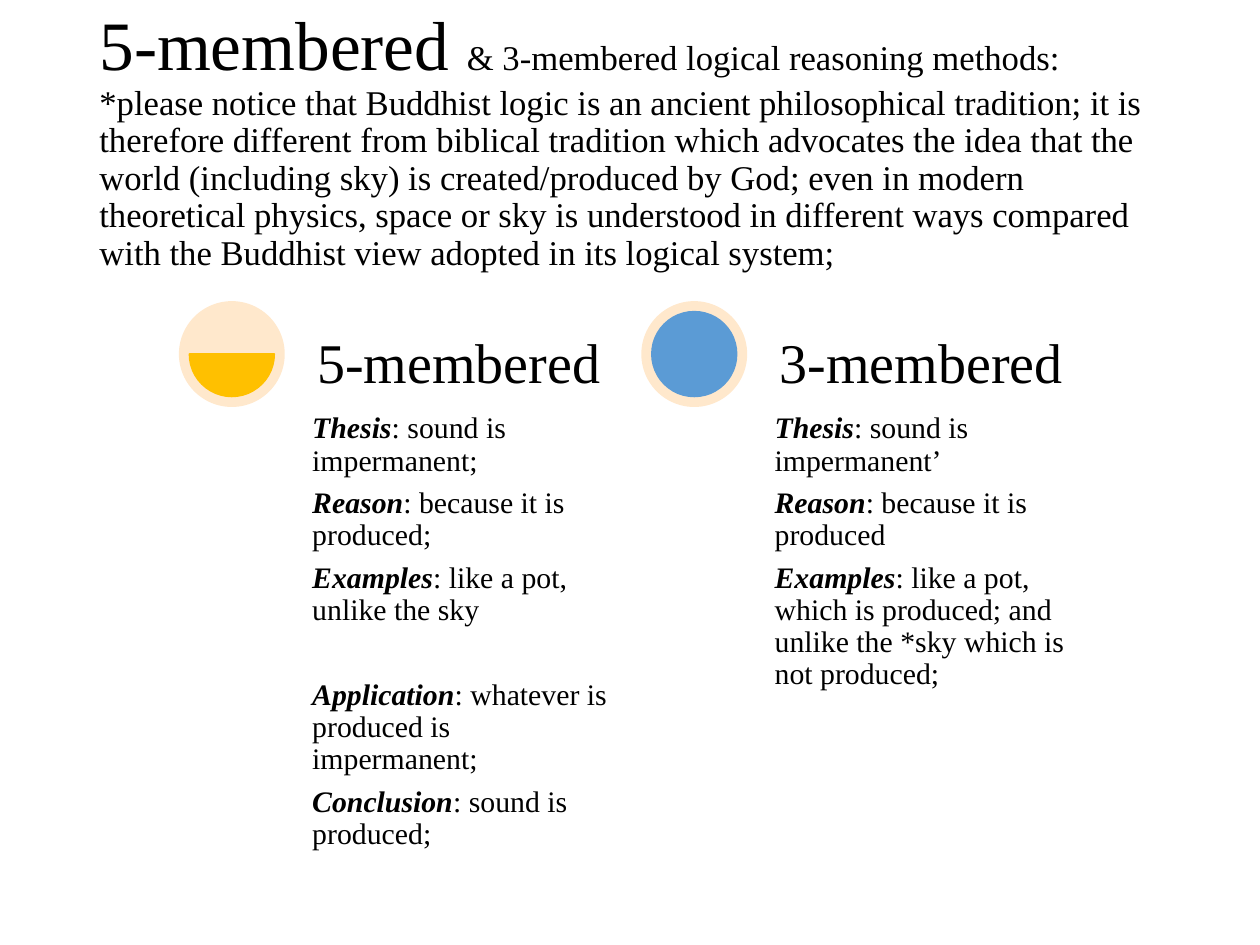
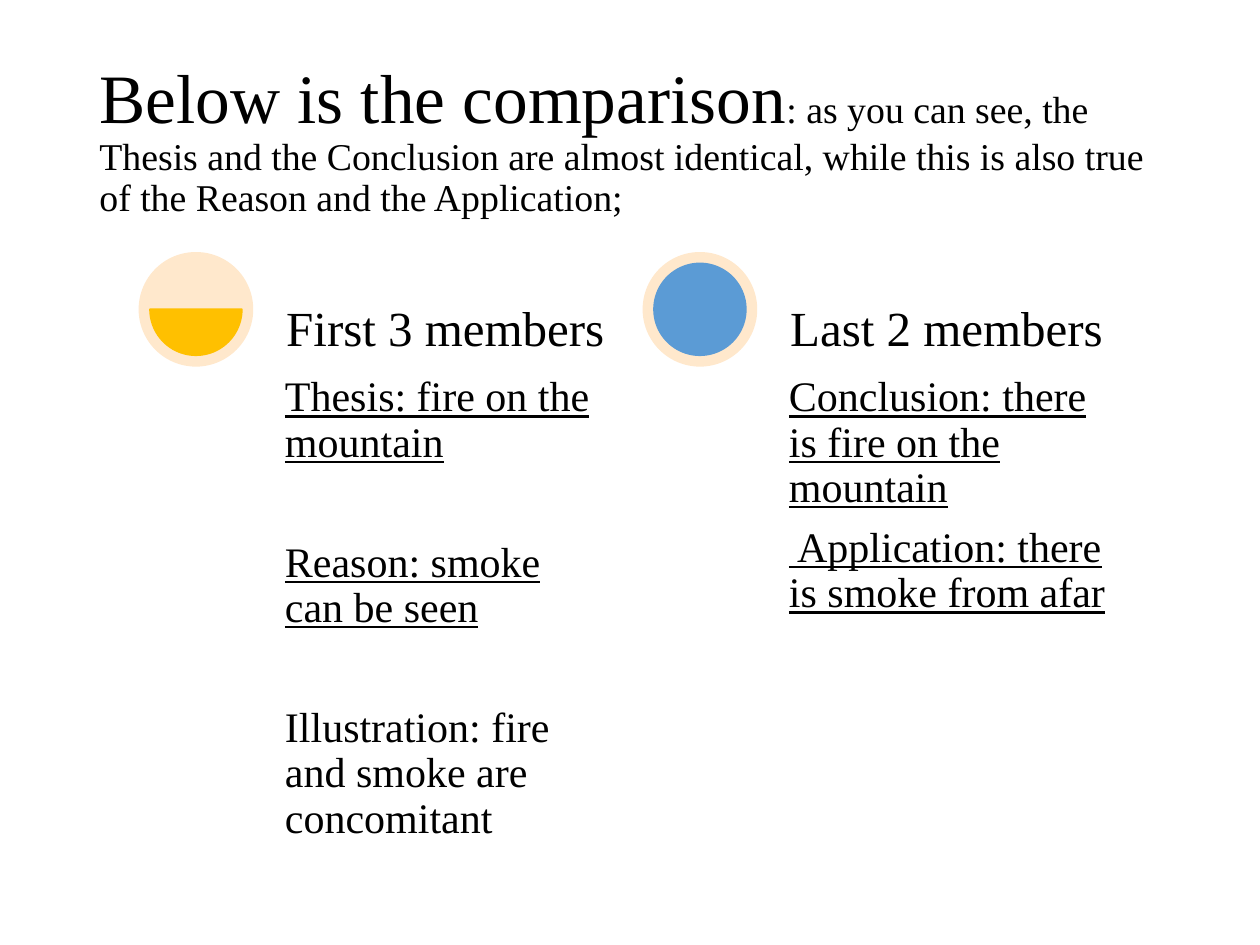
from pptx import Presentation
from pptx.dml.color import RGBColor
from pptx.enum.shapes import MSO_SHAPE
from pptx.enum.text import MSO_ANCHOR
from pptx.util import Inches, Pt

OVAL, CHORD = MSO_SHAPE.OVAL, MSO_SHAPE.CHORD
TOP, MIDDLE, BOTTOM = MSO_ANCHOR.TOP, MSO_ANCHOR.MIDDLE, MSO_ANCHOR.BOTTOM

COLORS = {"text": "000000", "disc": "FFE8CC", "half": "FFC000", "full": "5B9BD5"}
FONT = "Times New Roman"
SLIDE_W, SLIDE_H = 10, 7.5
BODY_BOTTOM = 0.9 * SLIDE_H

# Shares of the disc's diameter
TEXT_OFFSET, TEXT_WIDTH, CHORD_INSET = 1.2, 2.96, 0.1

# Shares of the text size
PARA_GAP = 0.35
WIDE_GAP = 1.78

# Chord angles in units of 100000/60000 degrees
CHORDS = {"half": (0, 108), "full": (162, 162)}

LEAD = {"bold": True, "italic": True}
UNDERLINED = {"underline": True}


def rgb(name):
    return RGBColor.from_string(COLORS[name])


def add_text(s, box, paragraphs, anchor=TOP, inset=(0.1, 0.05)):
    """Each paragraph is (runs, space after); each run is (text, size, format)."""
    tf = s.shapes.add_textbox(*map(Inches, box)).text_frame
    x_inset, y_inset = map(Inches, inset)
    settings = {"word_wrap": True, "vertical_anchor": anchor,
                "margin_left": x_inset, "margin_right": x_inset,
                "margin_top": y_inset, "margin_bottom": y_inset}
    for name, value in settings.items():
        setattr(tf, name, value)
    for i, (runs, gap) in enumerate(paragraphs):
        p = tf.add_paragraph() if i else tf.paragraphs[0]
        p.line_spacing = 0.9
        p.space_after = Pt(gap)
        for text, size, style in runs:
            r = p.add_run()
            r.text = text
            r.font.color.rgb = rgb("text")
            for name, value in {"name": FONT, "size": Pt(size), **style}.items():
                setattr(r.font, name, value)


def add_title(s, lead, rest, rest_size):
    box = (0.069 * SLIDE_W, 0.4, 0.862 * SLIDE_W, 1.45)
    add_text(s, box, [([(lead, 39.6, {}), (rest, rest_size, {})], 0)], MIDDLE)


def add_round(s, kind, left, top, size, color):
    sp = s.shapes.add_shape(kind, *map(Inches, (left, top, size, size)))
    sp.shadow.inherit = False
    sp.fill.solid()
    sp.fill.fore_color.rgb = rgb(color)
    sp.line.fill.background()
    return sp


def add_gauge(s, left, top, disc, level):
    add_round(s, OVAL, left, top, disc, "disc")
    inset = CHORD_INSET * disc
    sp = add_round(s, CHORD, left + inset, top + inset, disc - 2 * inset, level)
    sp.line.color.rgb = rgb(level)
    sp.line.width = Pt(1)
    for i, angle in enumerate(CHORDS[level]):
        sp.adjustments[i] = angle


def add_columns(s, left, top, pitch, disc, sizes, insets, columns):
    """Each column is (heading, members); each member is (runs, gap below)."""
    head_size, body_size = sizes
    head_inset, body_inset = insets
    for i, (level, (heading, members)) in enumerate(zip(CHORDS, columns)):
        x = left + i * pitch
        add_gauge(s, x, top, disc, level)
        text_x, width = x + TEXT_OFFSET * disc, TEXT_WIDTH * disc
        body_top = top + disc
        body = [([(text, body_size, style) for text, style in runs], gap * body_size)
                for runs, gap in members]
        add_text(s, (text_x, body_top, width, BODY_BOTTOM - body_top), body,
                 inset=(body_inset, body_inset))
        add_text(s, (text_x, top, width, disc), [([(heading, head_size, {})], 0)],
                 BOTTOM, (head_inset, head_inset))


def member(name, text, gap=PARA_GAP):
    return [(name, LEAD), (": " + text, {})], gap


def line(text, style=UNDERLINED, gap=PARA_GAP):
    return [(text, style)], gap


def add_methods_slide(s):
    add_title(s, "5-membered ",
              "& 3-membered logical reasoning methods: *please notice that Buddhist "
              "logic is an ancient philosophical tradition; it is therefore different "
              "from biblical tradition which advocates the idea that the world "
              "(including sky) is created/produced by God; even in modern theoretical "
              "physics, space or sky is understood in different ways compared with the "
              "Buddhist view adopted in its logical system;", 19.8)
    five = [member("Thesis", "sound is impermanent;"),
            member("Reason", "because it is produced;"),
            member("Examples", "like a pot, unlike the sky", WIDE_GAP),
            member("Application", "whatever is produced is impermanent;"),
            member("Conclusion", "sound is produced;")]
    three = [member("Thesis", "sound is impermanent’"),
             member("Reason", "because it is produced"),
             member("Examples", "like a pot, which is produced; and unlike the *sky "
                                "which is not produced;")]
    add_columns(s, 1.42, 2.39, 3.67, 0.84, (32, 17), (0.09, 0.05),
                [("5-membered", five), ("3-membered", three)])


def add_comparison_slide(s):
    add_title(s, "Below is the comparison",
              ": as you can see, the Thesis and the Conclusion are almost identical, "
              "while this is also true of the Reason and the Application;", 21.6)
    first = [line("Thesis: fire on the mountain", gap=WIDE_GAP),
             line("Reason: smoke can be seen", gap=WIDE_GAP),
             line("Illustration: fire and smoke are concomitant", {})]
    last = [line("Conclusion: there is fire on the mountain"),
            line(" Application: there is smoke from afar")]
    add_columns(s, 1.1, 2, 4, 0.91, (28, 24), (0.08, 0.07),
                [("First 3 members", first), ("Last 2 members", last)])


def main():
    prs = Presentation()
    prs.slide_width, prs.slide_height = Inches(SLIDE_W), Inches(SLIDE_H)
    blank = prs.slide_layouts[6]
    for build in (add_methods_slide, add_comparison_slide):
        build(prs.slides.add_slide(blank))
    prs.save("out.pptx")


if __name__ == "__main__":
    main()
